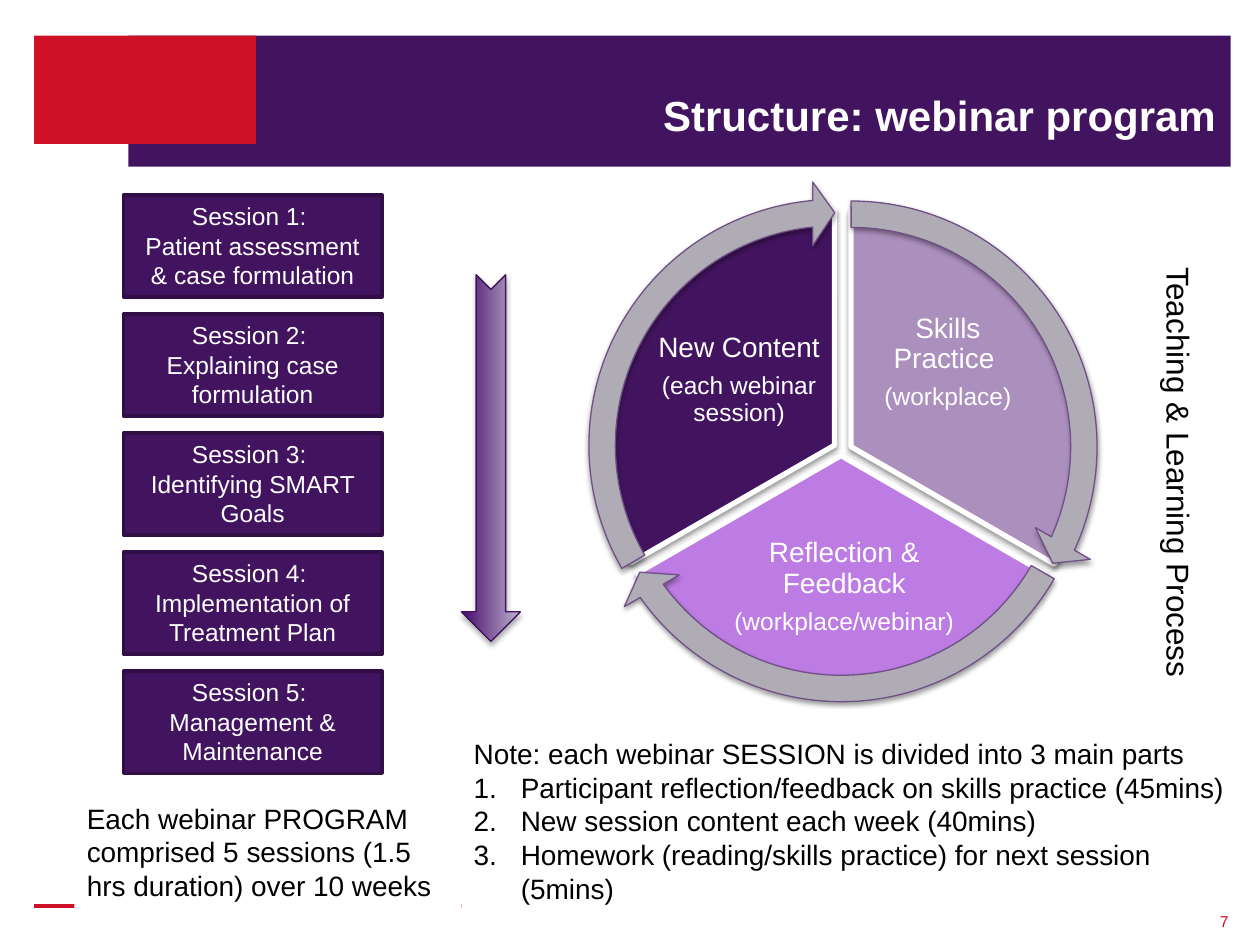
from dataclasses import dataclass

from lxml.etree import SubElement
from pptx import Presentation
from pptx.dml.color import RGBColor
from pptx.enum.shapes import MSO_CONNECTOR, MSO_SHAPE
from pptx.enum.text import MSO_ANCHOR, PP_ALIGN
from pptx.oxml.ns import qn
from pptx.util import Cm, Pt


@dataclass(frozen=True)
class Theme:
    """Colours, font and type sizes of the slide."""
    font: str = "Arial"
    plum: str = "42145F"
    edge: str = "310F46"
    red: str = "CE1126"
    mauve: str = "AB8FBD"
    lilac: str = "BC7CE4"
    grey: str = "B0ACB6"
    rim: str = "714F87"
    deep: str = "45096A"
    pale: str = "BFB3CF"
    white: str = "FFFFFF"
    black: str = "000000"
    title: int = 24
    side: int = 18
    body: int = 16
    small: int = 14
    tiny: int = 9


class Page:
    """Holds the theme and the current slide, and draws on it."""

    def __init__(self, deck, theme):
        """Add a title-only slide to the deck."""
        self.theme = theme
        self.slide = deck.slides.add_slide(deck.slide_layouts[5])
        self.shapes = self.slide.shapes

    def letter(self, shape, paras, color, align=PP_ALIGN.LEFT, anchor=MSO_ANCHOR.TOP,
               inset=None, space=None, after=None, count=False):
        """Fill a shape with (text, size) paragraphs, numbered after the first on request."""
        frame = shape.text_frame
        frame.word_wrap = True
        frame.vertical_anchor = anchor
        if inset is not None:
            frame.margin_left = frame.margin_right = Cm(inset)
            frame.margin_top = frame.margin_bottom = Cm(inset)
        for i, (text, size) in enumerate(paras):
            para = frame.add_paragraph() if i else frame.paragraphs[0]
            if count and i:
                props = para._p.get_or_add_pPr()
                props.set("marL", str(Cm(0.95)))
                props.set("indent", str(-Cm(0.95)))
                SubElement(props, qn("a:buFont"), typeface="+mj-lt")
                SubElement(props, qn("a:buAutoNum"), type="arabicPeriod")
            para.alignment = align
            if space is not None:
                para.line_spacing = space
            if after is not None:
                para.space_after = Pt(after)
            run = para.add_run()
            run.text = text
            run.font.name = self.theme.font
            run.font.size = Pt(size)
            run.font.color.rgb = RGBColor.from_string(color)
        return frame

    def title(self, box, text):
        """Place and style the title."""
        shape = self.shapes.title
        shape.left, shape.top, shape.width, shape.height = map(Cm, box)
        frame = self.letter(shape, [(text, self.theme.title)], self.theme.white,
                            PP_ALIGN.RIGHT, MSO_ANCHOR.BOTTOM, space=Pt(25))
        frame.paragraphs[0].runs[0].font.bold = True

    def shape(self, kind, box, fill, line=None, width=0.75, adjust=(), shade=0):
        """Add a preset shape, with a soft shadow of the given strength."""
        shape = self.shapes.add_shape(kind, *map(Cm, box))
        for i, value in enumerate(adjust):
            shape.adjustments[i] = value
        shape.shadow.inherit = False
        if isinstance(fill, tuple):
            shape.fill.gradient()
            shape.fill.gradient_angle = 90
            for stop, color in zip(shape.fill.gradient_stops, fill):
                stop.color.rgb = RGBColor.from_string(color)
        else:
            shape.fill.solid()
            shape.fill.fore_color.rgb = RGBColor.from_string(fill)
        if line:
            shape.line.color.rgb = RGBColor.from_string(line)
            shape.line.width = Pt(width)
        else:
            shape.line.fill.background()
        if shade:
            effect = shape._element.spPr.find(qn("a:effectLst"))
            cast = SubElement(effect, qn("a:outerShdw"), blurRad=str(Pt(3.1)),
                              dist=str(Pt(1.7)), dir="5400000", rotWithShape="0")
            tint = SubElement(cast, qn("a:srgbClr"), val=self.theme.black)
            SubElement(tint, qn("a:alpha"), val=str(shade * 1000))
        return shape

    def block(self, box, fill, paras, color, line=None, width=2, **style):
        """Add a filled rectangle with text."""
        shape = self.shape(MSO_SHAPE.RECTANGLE, box, fill, line, width)
        return self.letter(shape, paras, color, **style)

    def text(self, box, paras, color, **style):
        """Add a plain text box."""
        return self.letter(self.shapes.add_textbox(*map(Cm, box)), paras, color, **style)

    def rule(self, start, end, color, width):
        """Add a straight line."""
        line = self.shapes.add_connector(MSO_CONNECTOR.STRAIGHT, *map(Cm, start + end))
        line.line.color.rgb = RGBColor.from_string(color)
        line.line.width = Pt(width)
        SubElement(line._element.spPr, qn("a:effectLst"))


def main():
    """Build the slide and save it."""
    deck = Presentation()
    deck.slide_width, deck.slide_height = Cm(25.4), Cm(19.05)
    theme = Theme()
    page = Page(deck, theme)

    page.shape(MSO_SHAPE.RECTANGLE, (2.59, 0.72, 22.22, 2.64), theme.plum)
    page.rule((0.69, 18.26), (24.82, 18.26), theme.red, 2.25)
    page.shape(MSO_SHAPE.RECTANGLE, (0.69, 0.72, 4.47, 2.18), theme.red)
    title = page.shapes.title._element
    title.getparent().append(title)
    page.title((5.21, 1.19, 19.56, 1.75), "Structure: webinar program")
    page.text((24.08, 18.29, 0.69, 0.58), [("7", theme.tiny)], theme.red,
              align=PP_ALIGN.RIGHT, anchor=MSO_ANCHOR.MIDDLE, inset=0)

    topics = ("Patient assessment & case formulation", "Explaining case formulation",
              "Identifying SMART Goals", "Implementation of Treatment Plan",
              "Management & Maintenance")
    for i, topic in enumerate(topics):
        lines = [(f"Session {i + 1}: ", theme.small), (topic, theme.small)]
        page.block((2.49, 3.93 + 2.4 * i, 5.21, 2.06), theme.plum, lines, theme.white,
                   theme.edge, align=PP_ALIGN.CENTER)

    notes = ("Note: each webinar SESSION is divided into 3 main parts",
             "Participant reflection/feedback on skills practice (45mins)",
             "New session content each week (40mins)",
             "Homework (reading/skills practice) for next session (5mins)")
    page.block((9.3, 14.73, 16.1, 3.68), theme.white,
               [(note, theme.body) for note in notes], theme.black, count=True)
    total = "Each webinar PROGRAM comprised 5 sessions (1.5 hrs duration) over 10 weeks"
    page.block((1.5, 16.03, 7.8, 2.31), theme.white, [(total, theme.body)], theme.black)

    arrow = page.shape(MSO_SHAPE.NOTCHED_RIGHT_ARROW, (6.2, 8.64, 7.39, 1.19),
                       (theme.deep, theme.pale), theme.plum, shade=35)
    arrow.rotation = 90

    parts = (
        (12.42, 4.27, (162, 18), theme.mauve, (14.72, 161.99),
         (17.42, 6.27, 3.38, 2.08), "Skills Practice ", "(workplace)"),
        (12.22, 4.45, (18, 90), theme.lilac, (86.72, 18),
         (14.48, 10.59, 5.08, 2.49), "Reflection & Feedback", "(workplace/webinar)"),
        (12.09, 4.24, (90, 162), theme.plum, (158.73, 90),
         (13.21, 6.25, 3.38, 2.82), "New Content", "(each webinar session)"),
    )
    for left, top, span, fill, _, box, head, place in parts:
        page.shape(MSO_SHAPE.PIE, (left, top, 9.47, 9.47), fill, theme.white, 3, span, 38)
        page.text(box, [(head, theme.body), (place, theme.small)], theme.white,
                  align=PP_ALIGN.CENTER, anchor=MSO_ANCHOR.MIDDLE, inset=0.05,
                  space=0.9, after=5.6)
    for left, top, _, _, (end, start), *_ in parts:
        page.shape(MSO_SHAPE.CIRCULAR_ARROW, (left - 0.59, top - 0.59, 10.66, 10.66),
                   theme.grey, theme.rim, adjust=(0.05, 3.27, end, start, 0.06), shade=38)

    side = page.text((23.01, 4.93, 1.27, 9.19),
                     [("Teaching & Learning Process", theme.side)], theme.black,
                     align=PP_ALIGN.CENTER)
    side._txBody.bodyPr.set("vert", "vert")
    deck.save("out.pptx")


if __name__ == "__main__":
    main()
